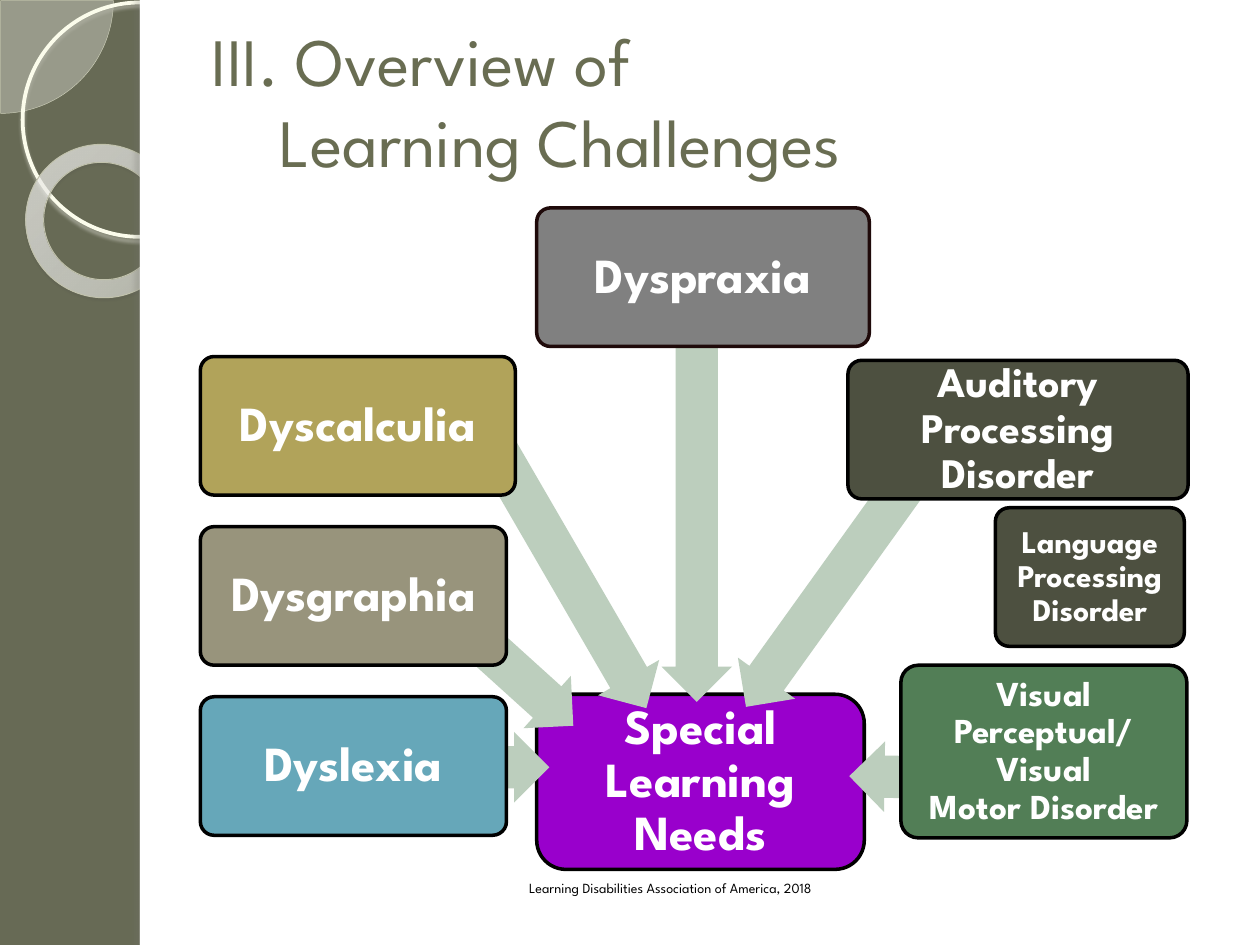
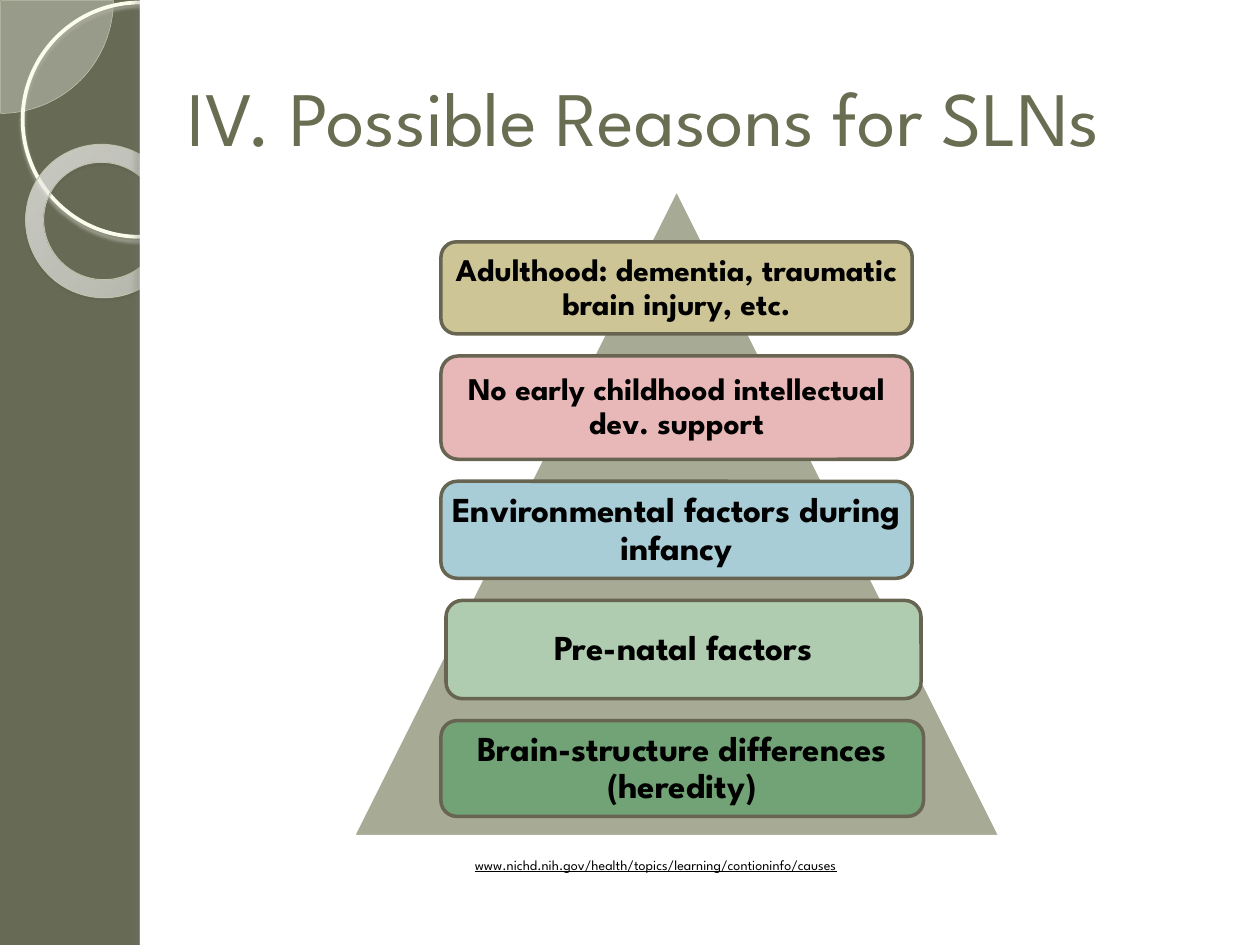
"""Build two slides on learning challenges and their possible causes."""
from math import atan2, degrees, hypot

from lxml.etree import SubElement
from pptx import Presentation
from pptx.dml.color import RGBColor
from pptx.enum.shapes import MSO_SHAPE
from pptx.enum.text import MSO_ANCHOR, MSO_AUTO_SIZE, PP_ALIGN
from pptx.oxml.ns import qn
from pptx.util import Inches, Pt

FONT = "League Spartan"
W, H = 10, 7.5
BAND, OLIVE, ARROW = "676A55", "696D52", "BCCEBD"
WHITE, BLACK = "FFFFFF", "000000"
PANEL_X = 1.11

TITLES = [
    ("III. Overview of\vLearning Challenges", (1.58, 0.17, 8.2, 1.25), 38.7, 0.54),
    ("IV. Possible Reasons for SLNs", (1.39, 0.29, 8.47, 1.25), 44, 0),
]
FOOTERS = [
    ("Learning Disabilities Association of America, 2018", (4.1, 6.93, 3.49, 0.29), False),
    ("www.nichd.nih.gov/health/topics/learning/contioninfo/causes", (3.67, 6.75, 3.92, 0.24), True),
]

LEFT, TOP, PITCH, BOX_H = 1.59, 2.83, 1.35, 1.1
HUB = ("Special Learning Needs", (4.26, 5.51, 2.6, 1.39), "9900CC", 28)
CHALLENGES = [
    ("Language Processing Disorder", (7.9, 4.03, 1.5, BOX_H), "4D5040", 18, None),
    ("Visual Perceptual/\vVisual\vMotor Disorder", (7.15, 5.28, 2.27, 1.37), "527E56", 20,
     ((8.11, 6.18), (6.74, 6.16))),
    ("Auditory Processing Disorder", (6.73, 2.86, 2.7, BOX_H), "4D5040", 24,
     ((7.37, 3.59), (5.92, 5.61))),
    ("Dyslexia", (LEFT, TOP + 2 * PITCH, 2.43, BOX_H), "66A7B9", 28,
     ((2.99, 6.09), (4.36, 6.09))),
    ("Dysgraphia", (LEFT, TOP + PITCH, 2.43, BOX_H), "98947C", 28,
     ((3.09, 4.44), (4.55, 5.76))),
    ("Dyscalculia", (LEFT, TOP, 2.5, BOX_H), "B1A35A", 28,
     ((3.68, 3.12), (5.13, 5.62))),
    ("Dyspraxia", (4.26, 1.65, 2.64, BOX_H), "808080", 28,
     ((5.53, 2.43), (5.53, 5.57))),
]

TRIANGLE = (2.8, 1.5, 5.14, 5.14)
CAUSE_TOP, CAUSE_GAP = 1.92, 0.175
CAUSES = [
    ("Adulthood: dementia, traumatic brain injury, etc.", 3.5, 3.74, 0.73, "CEC597", 18),
    ("No early childhood intellectual dev. support", 3.5, 3.74, 0.82, "E8B7B7", 18),
    ("Environmental factors during infancy", 3.5, 3.74, 0.77, "A8CDD7", 20),
    ("Pre-natal factors", 3.54, 3.77, 0.78, "B0CCB0", 20),
    ("Brain-structure differences (heredity)", 3.5, 3.83, 0.76, "72A376", 20),
]


def rgb(value):
    """Turn a hex string into a colour."""
    return RGBColor.from_string(value)


def inches(box):
    """Convert a box in inches to lengths."""
    return [Inches(v) for v in box]


def add_colour(parent, value, alpha):
    """Append a colour of the given opacity in percent."""
    clr = SubElement(parent, qn("a:srgbClr"), val=value)
    SubElement(clr, qn("a:alpha"), val=str(alpha * 1000))


def add_shape(slide, kind, box, fill=None, line=None, width=2, adj=()):
    """Add a flat preset shape."""
    sp = slide.shapes.add_shape(kind, *inches(box))
    sp.shadow.inherit = False
    for i, value in enumerate(adj):
        sp.adjustments[i] = value
    if fill:
        sp.fill.solid()
        sp.fill.fore_color.rgb = rgb(fill)
    else:
        sp.fill.background()
    if line:
        sp.line.color.rgb = rgb(line)
        sp.line.width = Pt(width)
    else:
        sp.line.fill.background()
    return sp


def add_shadow(sp, colour, alpha, blur, dist, angle):
    """Give a shape an outer shadow."""
    effects = sp._element.spPr.find(qn("a:effectLst"))
    shadow = SubElement(effects, qn("a:outerShdw"), blurRad=str(Pt(blur)),
                        dist=str(Pt(dist)), dir=str(angle * 60000),
                        algn="tl", rotWithShape="0")
    add_colour(shadow, colour, alpha)


def style(p, size, colour, bold=False):
    """Set the font of a paragraph."""
    p.font.name, p.font.size, p.font.bold = FONT, Pt(size), bold
    p.font.color.rgb = rgb(colour)


def add_box(slide, text, box, fill, size, colour, line, adj=1 / 6):
    """Add a rounded box with centred bold text."""
    sp = add_shape(slide, MSO_SHAPE.ROUNDED_RECTANGLE, box, fill, line, adj=[adj])
    tf = sp.text_frame
    tf.word_wrap, tf.vertical_anchor = True, MSO_ANCHOR.MIDDLE
    tf.margin_left = tf.margin_right = tf.margin_top = tf.margin_bottom = Inches(0.04)
    p = tf.paragraphs[0]
    p.text, p.alignment, p.line_spacing = text, PP_ALIGN.CENTER, 0.9
    style(p, size, colour, True)


def add_arrow(slide, tail, tip, thick=0.56):
    """Add a block arrow from tail to tip."""
    dx, dy = tip[0] - tail[0], tip[1] - tail[1]
    length = hypot(dx, dy)
    box = ((tail[0] + tip[0] - length) / 2, (tail[1] + tip[1] - thick) / 2, length, thick)
    sp = add_shape(slide, MSO_SHAPE.RIGHT_ARROW, box, ARROW, adj=[0.6, 0.5])
    sp.rotation = degrees(atan2(dy, dx))


def fill_donut(sp):
    """Fill a shape with a translucent circular gradient."""
    sp.fill.gradient()
    grad = sp._element.spPr.find(qn("a:gradFill"))
    for child in list(grad):
        grad.remove(child)
    stops = SubElement(grad, qn("a:gsLst"))
    for pos, colour, alpha in ((0, "FDFDF9", 70), (70, "FFFFFC", 55), (100, "DCDFB4", 60)):
        add_colour(SubElement(stops, qn("a:gs"), pos=str(pos * 1000)), colour, alpha)
    circle = SubElement(grad, qn("a:path"), path="circle")
    SubElement(circle, qn("a:fillToRect"), l="-408000", t="-50000", r="508000", b="150000")


def decorate(layout, slide):
    """Put the side band and its rings on the layout."""
    layout.background.fill.solid()
    layout.background.fill.fore_color.rgb = rgb(BAND)
    pie = add_shape(slide, MSO_SHAPE.PIE, (-0.89, -0.89, 1.79, 1.79), "FCFDF8",
                    "CDCFB9", 0.25, adj=[0, 54])
    clr = pie._element.spPr.find(qn("a:solidFill")).find(qn("a:srgbClr"))
    SubElement(clr, qn("a:alpha"), val="33000")
    ring = add_shape(slide, MSO_SHAPE.OVAL, (0.18, 0.02, 1.86, 1.86), None, "FBFCEB", 2.15)
    add_shadow(ring, "AFB0A2", 85, 2, 2, 90)
    donut = add_shape(slide, MSO_SHAPE.DONUT, (0.2, 1.15, 1.23, 1.21), None,
                      "C1C2AC", 0.58, adj=[0.118])
    donut.rotation = 38.6
    fill_donut(donut)
    add_shadow(donut, "58594F", 35, 1, 1.2, 75)
    panel = add_shape(slide, MSO_SHAPE.RECTANGLE, (PANEL_X, 0, W - PANEL_X, H), WHITE)
    edge = add_shape(slide, MSO_SHAPE.RECTANGLE, (PANEL_X, 0, 0.08, H), WHITE)
    add_shadow(edge, "75756E", 25, 3, 3, 180)
    for sp in (pie, ring, donut, panel, edge):
        layout.shapes.element.append(sp._element)


def set_title(slide, text, box, size, hang):
    """Fill and place the title, hanging later lines by an indent."""
    sp = slide.shapes.title
    sp.left, sp.top, sp.width, sp.height = inches(box)
    tf = sp.text_frame
    tf.auto_size, tf.vertical_anchor = MSO_AUTO_SIZE.NONE, MSO_ANCHOR.MIDDLE
    p = tf.paragraphs[0]
    p.text, p.alignment = text, PP_ALIGN.LEFT
    style(p, size, OLIVE)
    pPr = p._p.get_or_add_pPr()
    pPr.set("marL", str(Inches(hang)))
    pPr.set("indent", str(-Inches(hang)))


def add_footer(slide, text, box, underline):
    """Add the source line."""
    tf = slide.shapes.add_textbox(*inches(box)).text_frame
    tf.word_wrap = True
    p = tf.paragraphs[0]
    p.text = text
    style(p, 8, BLACK)
    p.font.underline = underline


def draw_challenges(slide):
    """Draw the hub with its challenges and arrows."""
    text, box, fill, size = HUB
    add_box(slide, text, box, fill, size, WHITE, BLACK)
    for text, box, fill, size, arrow in CHALLENGES:
        if arrow:
            add_arrow(slide, *arrow)
        line = "1F0A0A" if text == "Dyspraxia" else BLACK
        add_box(slide, text, box, fill, size, WHITE, line, 0.1)


def draw_causes(slide):
    """Draw the triangle with its stack of causes."""
    add_shape(slide, MSO_SHAPE.ISOSCELES_TRIANGLE, TRIANGLE, "A7AA95", WHITE)
    top = CAUSE_TOP
    for text, left, width, height, fill, size in CAUSES:
        add_box(slide, text, (left, top, width, height), fill, size, BLACK, "676451")
        top += height + CAUSE_GAP


def main():
    """Build and save the deck."""
    prs = Presentation()
    prs.slide_width, prs.slide_height = Inches(W), Inches(H)
    layout = prs.slide_layouts[5]
    slides = [prs.slides.add_slide(layout) for _ in TITLES]
    decorate(layout, slides[0])
    for slide, title, footer, draw in zip(slides, TITLES, FOOTERS, (draw_challenges, draw_causes)):
        set_title(slide, *title)
        draw(slide)
        add_footer(slide, *footer)
    prs.save("out.pptx")


if __name__ == "__main__":
    main()
